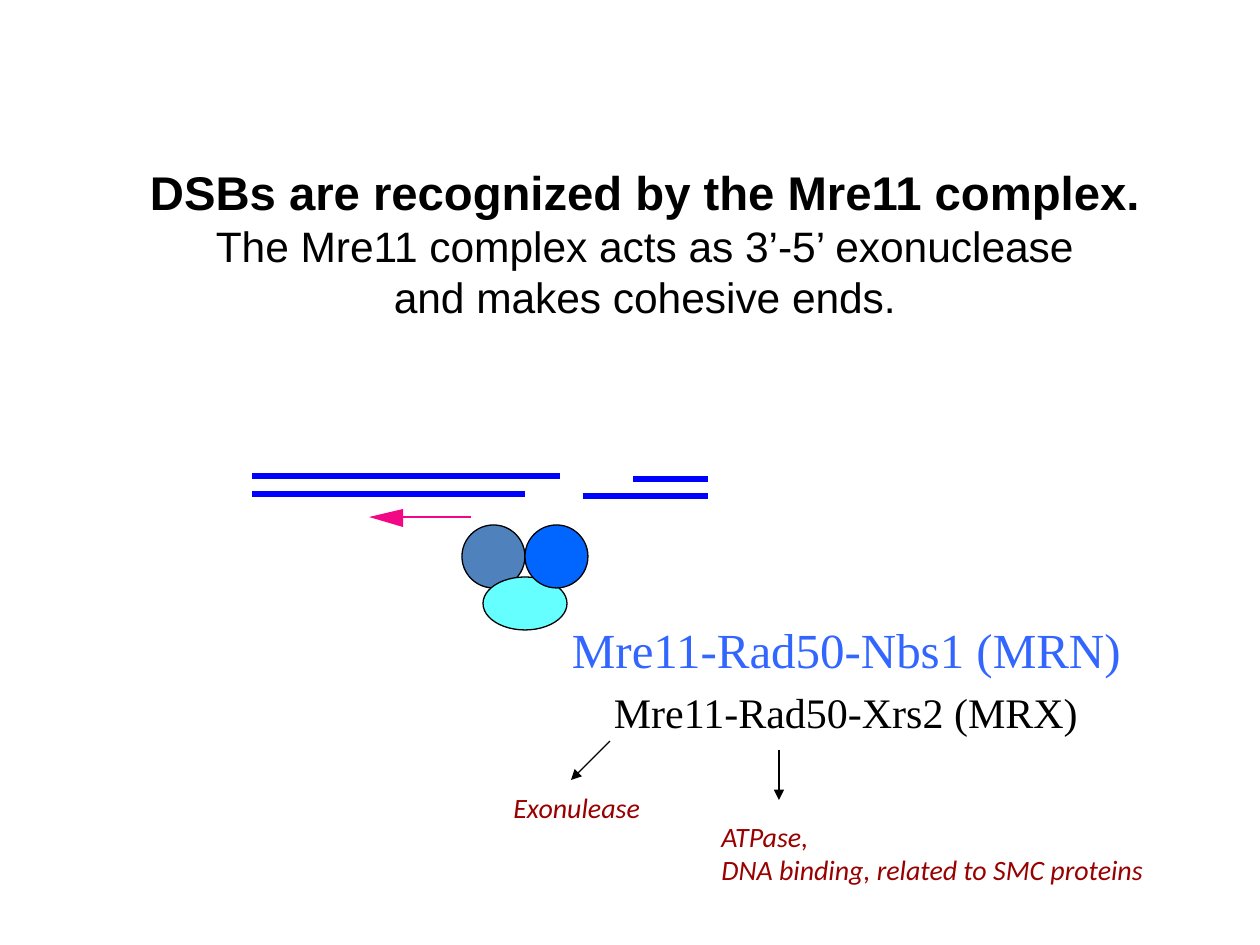
from lxml.etree import SubElement
from pptx import Presentation
from pptx.dml.color import RGBColor
from pptx.enum.shapes import MSO_CONNECTOR as Conn, MSO_SHAPE as Kind
from pptx.enum.text import MSO_ANCHOR as Anchor, PP_ALIGN as Align
from pptx.oxml.ns import qn
from pptx.util import Pt

PX = 914400 / 126


def emu(*nums):
    return [round(n * PX) for n in nums]


def rgb(code):
    return RGBColor.from_string(code)


class Page:
    """Draws styled elements on one slide, measured in px."""

    ink, blue, pink, red = "000000", "0000FF", "F20884", "990000"
    thin, bold = 0.75, 3

    def __init__(self, deck):
        self.slide = deck.slides.add_slide(deck.slide_layouts[6])
        self.shapes = self.slide.shapes

    def line(self, x1, y1, x2, y2, color=ink, width=thin, head=False):
        link = self.shapes.add_connector(Conn.STRAIGHT, *emu(x1, y1, x2, y2))
        link.line.color.rgb = rgb(color)
        link.line.width = Pt(width)
        if head:
            SubElement(link.line._get_or_add_ln(), qn("a:tailEnd"), type="triangle")
        SubElement(link._element.spPr, qn("a:effectLst"))

    def oval(self, x, y, w, h, color):
        oval = self.shapes.add_shape(Kind.OVAL, *emu(x, y, w, h))
        self.paint(oval, color)
        oval.line.color.rgb = rgb(self.ink)
        oval.line.width = Pt(self.thin)

    def wedge(self, start, *rest, color):
        form = self.shapes.build_freeform(*start, scale=PX)
        form.add_line_segments(rest, close=True)
        wedge = form.convert_to_shape()
        self.paint(wedge, color)
        wedge.line.fill.background()

    def paint(self, shape, color):
        shape.shadow.inherit = False
        shape.fill.solid()
        shape.fill.fore_color.rgb = rgb(color)

    def text(self, x, y, w, h, rows, frame=None, align=Align.LEFT):
        body = self.shapes.add_textbox(*emu(x, y, w, h)).text_frame
        for key, val in (frame or {"word_wrap": False}).items():
            setattr(body, key, val)
        for i, (words, font) in enumerate(rows):
            para = body.add_paragraph() if i else body.paragraphs[0]
            para.alignment = align
            run = para.add_run()
            run.text = words
            for key, val in font.items():
                if key == "color":
                    run.font.color.rgb = rgb(val)
                else:
                    setattr(run.font, key, val)


def main():
    deck = Presentation()
    deck.slide_width, deck.slide_height = emu(1260, 945)
    page = Page(deck)

    head = {"name": "Arial", "size": Pt(27), "bold": True, "color": page.ink}
    lead = head | {"size": Pt(24.3), "bold": False}
    page.text(78, 155, 1134, 176, [
        ("DSBs are recognized by the Mre11 complex.", head),
        ("The Mre11 complex acts as 3’-5’ exonuclease", lead),
        ("and makes cohesive ends.", lead),
    ], {"word_wrap": True, "vertical_anchor": Anchor.MIDDLE}, Align.CENTER)

    for x1, x2, y in ((252, 560, 476), (252, 525, 494),
                      (633, 708, 479), (583, 708, 496)):
        page.line(x1, y, x2, y, page.blue, page.bold)

    page.wedge((369, 517), (403, 509), (403, 527), color=page.pink)
    page.line(471, 517, 403, 517, page.pink, 1)

    for spot in ((462, 525, 63, 63, "4F81BD"), (483, 577, 84, 53, "66FFFF"),
                 (525, 525, 63, 63, "0066FF")):
        page.oval(*spot)

    sides = ("left", "top", "right", "bottom")
    tight = {f"margin_{side}": 0 for side in sides} | {"word_wrap": False}
    name = {"name": "Times New Roman", "size": Pt(28), "color": "3366FF"}
    also = name | {"size": Pt(24), "color": page.ink}
    page.text(572, 620, 554, 59, [("Mre11-Rad50-Nbs1 (MRN)", name)], tight)
    page.text(614, 687, 469, 50, [("Mre11-Rad50-Xrs2 (MRX)", also)], tight)

    page.line(610, 741, 571, 780, head=True)
    page.line(779, 750, 779, 800, head=True)

    note = {"name": "Calibri", "size": Pt(16), "italic": True, "color": page.red}
    page.text(501, 784, 155, 47, [("Exonulease", note)])
    page.text(709, 813, 457, 81, [
        ("ATPase,", note), ("DNA binding, related to SMC proteins", note)])

    deck.save("out.pptx")


if __name__ == "__main__":
    main()
